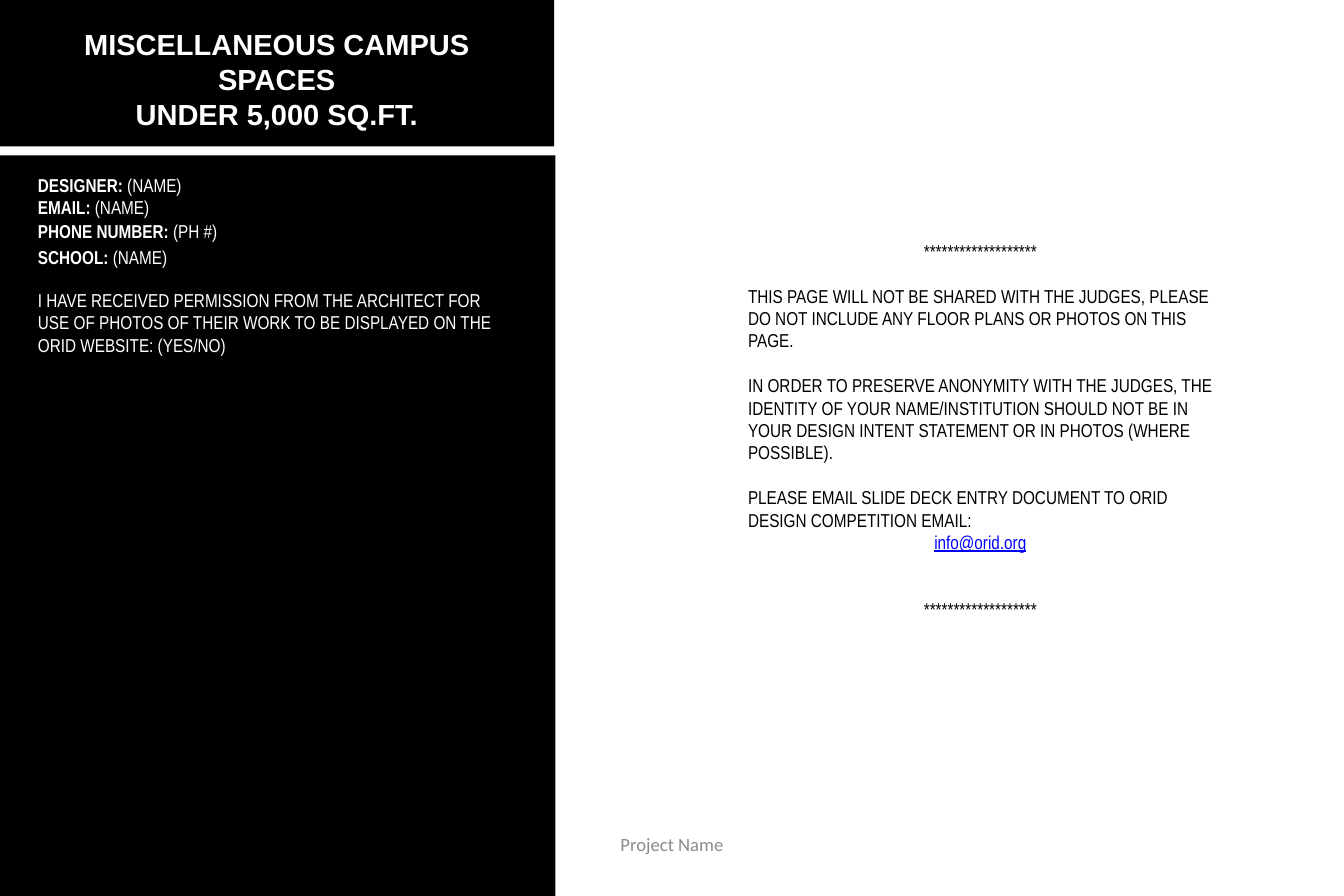
"""Build the entry cover page with contact details and submission notes."""
from pptx import Presentation
from pptx.dml.color import RGBColor
from pptx.enum import shapes, text
from pptx.util import Inches, Pt

BLACK, WHITE, GREY, BLUE = "000000", "FFFFFF", "8C8C8C", "0000FF"
NARROW = "Arial Narrow"
LINE = 21.6
STARS = "*" * 19

TITLE = ["MISCELLANEOUS CAMPUS SPACES", "UNDER 5,000 SQ.FT."]
PANELS = [(0, 0, 7.42, 1.96), (0, 2.08, 7.44, 9.92)]
FIELDS = [
    (2.28, "DESIGNER: ", "(NAME)"),
    (2.58, "EMAIL: ", "(NAME)"),
    (2.89, "PHONE NUMBER: ", "(PH #)"),
    (3.25, "SCHOOL: ", "(NAME)"),
]
PERMISSION = ("I HAVE RECEIVED PERMISSION FROM THE ARCHITECT FOR USE OF PHOTOS OF "
              "THEIR WORK TO BE DISPLAYED ON THE ORID WEBSITE: (YES/NO)")
EMAIL = "info@orid.org"
NOTES = [
    (STARS, 0),
    ("THIS PAGE WILL NOT BE SHARED WITH THE JUDGES, PLEASE DO NOT INCLUDE ANY "
     "FLOOR PLANS OR PHOTOS ON THIS PAGE.", 1),
    ("IN ORDER TO PRESERVE ANONYMITY WITH THE JUDGES, THE IDENTITY OF YOUR "
     "NAME/INSTITUTION SHOULD NOT BE IN YOUR DESIGN INTENT STATEMENT OR IN PHOTOS "
     "(WHERE POSSIBLE).", 1),
    ("PLEASE EMAIL SLIDE DECK ENTRY DOCUMENT TO ORID DESIGN COMPETITION EMAIL:", 1),
    (EMAIL, 0),
    (STARS, 2),
]


def rgb(color):
    return RGBColor.from_string(color)


def style(r, color, name=NARROW, size=18, bold=False):
    r.font.name, r.font.size, r.font.bold = name, Pt(size), bold
    r.font.color.rgb = rgb(color)


def add_text(s, box, lines, color, name=NARROW):
    tf = s.shapes.add_textbox(*map(Inches, box)).text_frame
    tf.word_wrap = True
    tf.text = "\n".join(lines)
    for p in tf.paragraphs:
        for r in p.runs:
            style(r, color, name)
    return tf


def add_panel(s, box):
    sp = s.shapes.add_shape(shapes.MSO_SHAPE.RECTANGLE, *map(Inches, box))
    sp.shadow.inherit = False
    sp.fill.solid()
    sp.fill.fore_color.rgb = rgb(BLACK)
    sp.line.fill.background()


def add_title(s):
    sp = s.shapes.title
    sp.left, sp.top, sp.width, sp.height = map(Inches, (0.28, 0.3, 6.85, 1.51))
    s.shapes.element.append(sp.element)
    tf = sp.text_frame
    tf.text = "\n".join(TITLE)
    tf.auto_size = text.MSO_AUTO_SIZE.NONE
    tf.vertical_anchor = text.MSO_ANCHOR.MIDDLE
    for p in tf.paragraphs:
        p.alignment = text.PP_ALIGN.CENTER
        style(p.runs[0], WHITE, "Arial", 28, True)


def add_notes(s):
    tf = add_text(s, (9.92, 3.16, 6.42, 5.55), [line for line, _ in NOTES], BLACK)
    for p, (line, gap) in zip(tf.paragraphs, NOTES):
        p.space_before = Pt(gap * LINE)
        if line in (STARS, EMAIL):
            p.alignment = text.PP_ALIGN.CENTER
        if line == EMAIL:
            style(p.runs[0], BLUE)
            p.runs[0].font.underline = True


def add_footer(s):
    tf = add_text(s, (6.12, 11.16, 5.76, 0.6), ["Project Name"], GREY, "Calibri")
    tf.margin_left = tf.margin_right = tf.margin_top = tf.margin_bottom = 0
    tf.paragraphs[0].alignment = text.PP_ALIGN.CENTER


def main():
    prs = Presentation()
    prs.slide_width, prs.slide_height = Inches(18), Inches(12)
    s = prs.slides.add_slide(prs.slide_layouts[5])
    for box in PANELS:
        add_panel(s, box)
    add_title(s)
    for top, label, value in FIELDS:
        p = add_text(s, (0.41, top, 6.42, 0.4), [label], WHITE).paragraphs[0]
        p.runs[0].font.bold = True
        r = p.add_run()
        r.text = value
        style(r, WHITE)
    add_text(s, (0.41, 3.82, 6.42, 1.01), [PERMISSION], WHITE)
    add_notes(s)
    add_footer(s)
    prs.save("out.pptx")


if __name__ == "__main__":
    main()
